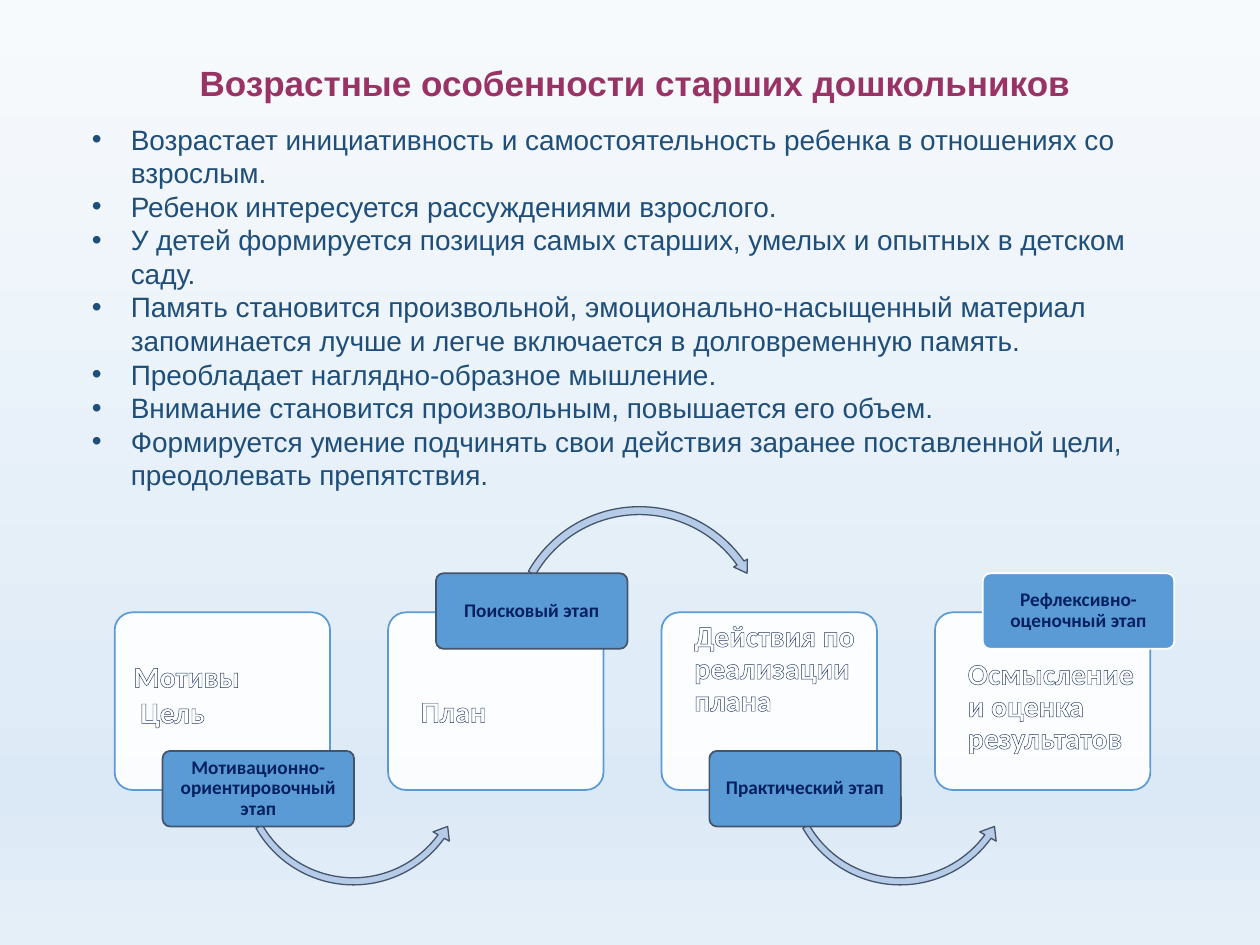
from lxml import etree
from pptx import Presentation
from pptx import util as u
from pptx.dml.color import RGBColor
from pptx.enum import shapes, text
from pptx.oxml import parse_xml
from pptx.oxml.ns import nsdecls, qn

NAVY = RGBColor(0x00, 0x20, 0x60)
BODY_BLUE = RGBColor(0x1F, 0x4E, 0x79)
PLUM = RGBColor(0x99, 0x33, 0x66)
BLUE = RGBColor(0x5B, 0x9B, 0xD5)
PALE_BLUE = RGBColor(0xB5, 0xCB, 0xE7)
SLATE = RGBColor(0x44, 0x54, 0x6A)
WHITE = RGBColor(0xFF, 0xFF, 0xFF)
HATCH_BLUE = RGBColor(0x8F, 0xAA, 0xDC)
OUTLINE = RGBColor(0x20, 0x38, 0x64)
BACKGROUND = [(0, RGBColor(0xF7, 0xFA, 0xFD)), (74, RGBColor(0xE0, 0xEC, 0xF7)),
              (83, RGBColor(0xDB, 0xE9, 0xF6)), (100, RGBColor(0xE5, 0xEF, 0xF8))]

TITLE = "Возрастные особенности старших дошкольников"
FEATURES = [
    "Возрастает инициативность и самостоятельность ребенка в отношениях со взрослым.",
    "Ребенок интересуется рассуждениями взрослого.",
    "У детей формируется позиция самых старших, умелых и опытных в детском саду.",
    "Память становится произвольной, эмоционально-насыщенный материал "
    "запоминается лучше и легче включается в долговременную память.",
    "Преобладает наглядно-образное мышление.",
    "Внимание становится произвольным, повышается его объем.",
    "Формируется умение подчинять свои действия заранее поставленной цели, "
    "преодолевать препятствия.",
]
# Stage: label, label line, card lines, text inset left and top, line spacing
STAGES = [
    ("Мотивационно-ориентировочный этап", SLATE, ["Мотивы", " Цель"], 0.11, 0.32, 1.0),
    ("Поисковый этап", SLATE, ["План"], 0.22, 0.63, 0.9),
    ("Практический этап", SLATE, ["Действия по реализации плана"], 0.22, 0.03, 0.9),
    ("Рефлексивно-оценочный этап", WHITE, ["Осмысление и оценка результатов"], 0.22, 0.33, 0.9),
]
FIRST_LEFT, STAGE_STEP = 0.91, 2.17
CARD_TOP, LABEL_UP, LABEL_DOWN = 4.86, 4.55, 5.96
# Arrow: preset, offset from card, top, size, adjustments
ARROW_UNDER = (shapes.MSO_SHAPE.LEFT_CIRCULAR_ARROW, 0.96, 5.2, 1.87,
               (0.03, 3.79, 21.54, 90.25, 0.04))
ARROW_OVER = (shapes.MSO_SHAPE.CIRCULAR_ARROW, 0.95, 3.99, 2.09,
              (0.03, 3.37, 194.88, 125.76, 0.03))


class SlideBuilder:
    """Holds the current slide and draws each kind of element on it."""

    def __init__(self, slide):
        self.slide = slide

    def background(self, stops):
        fill = self.slide.background.fill
        fill.gradient()
        fill.gradient_angle = 270
        stop_list = next(self.slide.element.iter(qn("a:gsLst")))
        for stop in list(stop_list):
            stop_list.remove(stop)
        for position, color in stops:
            stop = etree.SubElement(stop_list, qn("a:gs"), pos=str(position * 1000))
            etree.SubElement(stop, qn("a:srgbClr"), val=str(color))

    def add_lines(self, frame, lines, font, size, color, bold=False,
                  align=text.PP_ALIGN.LEFT, spacing=1.0):
        paragraphs = []
        for index, line in enumerate(lines):
            paragraph = frame.add_paragraph() if index else frame.paragraphs[0]
            paragraph.alignment = align
            paragraph.line_spacing = spacing
            run = paragraph.add_run()
            run.text = line
            run.font.name, run.font.size, run.font.bold = font, u.Pt(size), bold
            run.font.color.rgb = color
            paragraphs.append(paragraph)
        return paragraphs

    def text_box(self, left, top, width, height, lines, size, color, **style):
        box = self.slide.shapes.add_textbox(*map(u.Inches, (left, top, width, height)))
        box.text_frame.word_wrap = True
        box.text_frame.auto_size = text.MSO_AUTO_SIZE.SHAPE_TO_FIT_TEXT
        return self.add_lines(box.text_frame, lines, "Arial", size, color, **style)

    def bullets(self, paragraphs):
        for paragraph in paragraphs:
            properties = paragraph._p.get_or_add_pPr()
            properties.set("marL", str(u.Inches(0.31)))
            properties.set("indent", str(u.Inches(-0.31)))
            etree.SubElement(properties, qn("a:buFont"), typeface="Arial")
            etree.SubElement(properties, qn("a:buChar"), char="•")

    def shape(self, kind, left, top, width, height, fill, line, line_width, adjustments):
        shape = self.slide.shapes.add_shape(kind, *map(u.Inches, (left, top, width, height)))
        shape.shadow.inherit = False
        shape.fill.solid()
        shape.fill.fore_color.rgb = fill
        shape.line.color.rgb = line
        shape.line.width = u.Pt(line_width)
        for index, value in enumerate(adjustments):
            shape.adjustments[index] = value
        return shape

    def rounded(self, left, top, width, height, fill, line, inset_left, inset_top, anchor):
        shape = self.shape(shapes.MSO_SHAPE.ROUNDED_RECTANGLE, left, top, width, height,
                           fill, line, 1, [0.1])
        frame = shape.text_frame
        frame.word_wrap = True
        frame.vertical_anchor = anchor
        frame.margin_left, frame.margin_top = u.Inches(inset_left), u.Inches(inset_top)
        frame.margin_right = frame.margin_bottom = u.Inches(0.02)
        return shape

    def card(self, left, lines, inset_left, inset_top, spacing):
        card = self.rounded(left, CARD_TOP, 1.71, 1.41, WHITE, BLUE, inset_left, inset_top,
                            text.MSO_ANCHOR.TOP)
        color = next(card._element.spPr.iter(qn("a:srgbClr")))
        etree.SubElement(color, qn("a:alpha"), val="90000")
        for paragraph in self.add_lines(card.text_frame, lines, "Calibri", 17, WHITE,
                                        bold=True, spacing=spacing):
            self.hatch(paragraph.runs[0])

    def hatch(self, run):
        """Give the letters an outline and a hatched fill."""
        properties = run._r.get_or_add_rPr()
        properties.remove(properties.find(qn("a:solidFill")))
        properties.insert(0, parse_xml(
            f'<a:ln {nsdecls("a")} w="12700"><a:solidFill><a:srgbClr val="{OUTLINE}"/>'
            '</a:solidFill></a:ln>'))
        properties.insert(1, parse_xml(
            f'<a:pattFill {nsdecls("a")} prst="ltDnDiag"><a:fgClr><a:srgbClr val="{HATCH_BLUE}"/>'
            f'</a:fgClr><a:bgClr><a:srgbClr val="{WHITE}"/></a:bgClr></a:pattFill>'))

    def label(self, left, top, caption, line):
        label = self.rounded(left, top, 1.52, 0.6, BLUE, line, 0.02, 0.02,
                             text.MSO_ANCHOR.MIDDLE)
        self.add_lines(label.text_frame, [caption], "Calibri", 11, NAVY, bold=True,
                       align=text.PP_ALIGN.CENTER, spacing=0.9)

    def arrow(self, card_left, kind, offset, top, size, adjustments):
        self.shape(kind, card_left + offset, top, size, size, PALE_BLUE, SLATE, 0.75, adjustments)


def main():
    presentation = Presentation()
    presentation.slide_width, presentation.slide_height = u.Inches(10), u.Inches(7.5)
    builder = SlideBuilder(presentation.slides.add_slide(presentation.slide_layouts[6]))
    builder.background(BACKGROUND)

    # Feature list and title
    builder.bullets(builder.text_box(0.63, 0.92, 8.82, 3.06, FEATURES, 16, BODY_BLUE))
    builder.text_box(1.38, 0.44, 7.32, 0.44, [TITLE], 20, PLUM, bold=True,
                     align=text.PP_ALIGN.CENTER)

    # Stages: labels alternate below and above, arrows lead to the next stage
    for index, (caption, line, lines, inset_left, inset_top, spacing) in enumerate(STAGES):
        left = FIRST_LEFT + index * STAGE_STEP
        above = index % 2 == 1
        builder.card(left, lines, inset_left, inset_top, spacing)
        if index < len(STAGES) - 1:
            builder.arrow(left, *(ARROW_OVER if above else ARROW_UNDER))
        builder.label(left + 0.38, LABEL_UP if above else LABEL_DOWN, caption, line)

    presentation.save("out.pptx")


if __name__ == "__main__":
    main()
